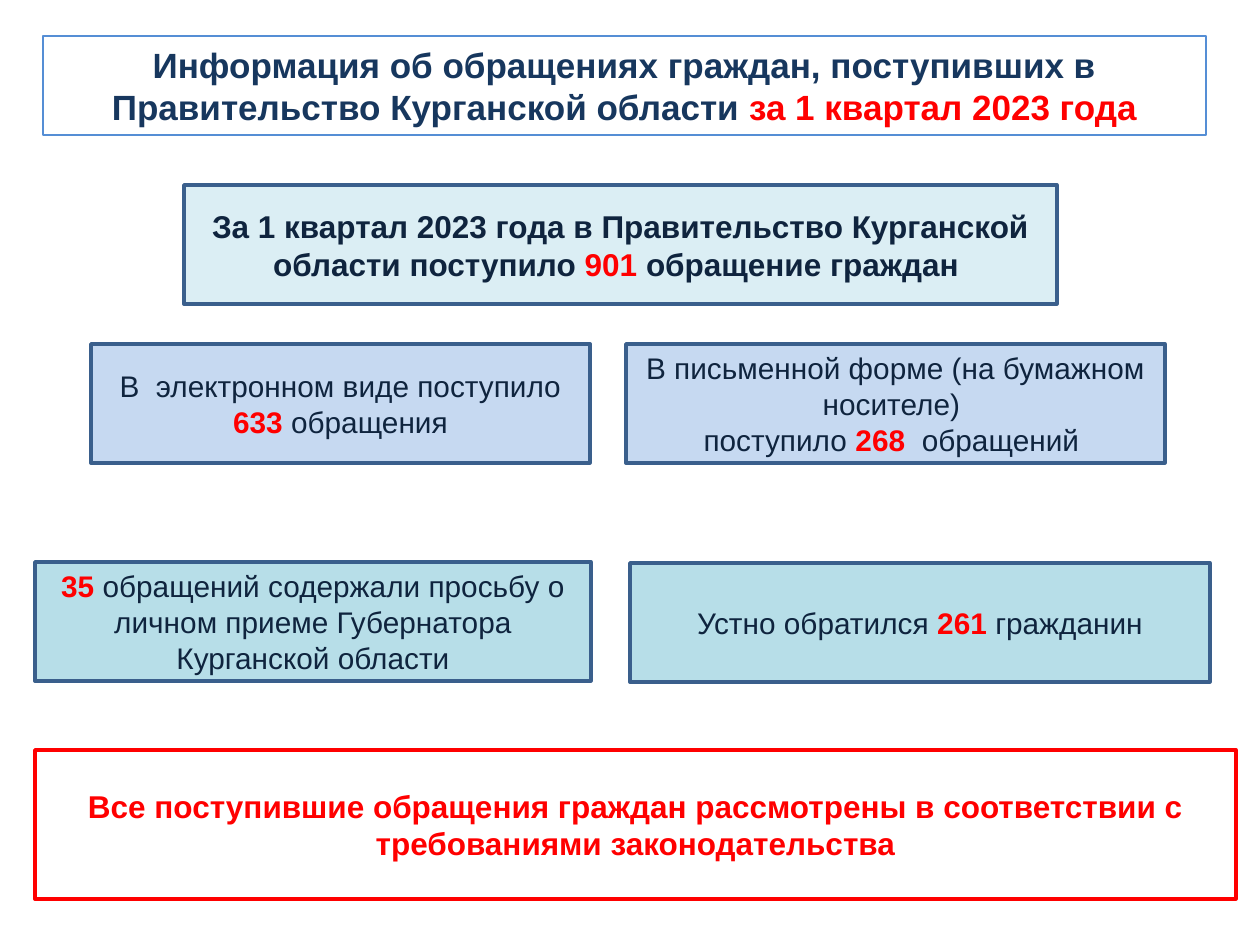
from pptx import Presentation
from pptx.dml.color import RGBColor
from pptx.enum.shapes import MSO_SHAPE
from pptx.enum.text import MSO_ANCHOR, PP_ALIGN
from pptx.util import Emu, Pt

RECT = MSO_SHAPE.RECTANGLE
MIDDLE = MSO_ANCHOR.MIDDLE
CENTER = PP_ALIGN.CENTER
PX = 914400 // 126

RED = RGBColor(0xFF, 0x00, 0x00)
NAVY = RGBColor(0x17, 0x37, 0x5E)
DARK = RGBColor(0x0F, 0x24, 0x3E)
BLUE = RGBColor(0x55, 0x8E, 0xD5)
STEEL = RGBColor(0x3A, 0x5F, 0x8C)
PALE = RGBColor(0xDB, 0xEE, 0xF4)
LILAC = RGBColor(0xC6, 0xD9, 0xF1)
AQUA = RGBColor(0xB7, 0xDE, 0xE8)

prs = Presentation()
prs.slide_width = Emu(1260 * PX)
prs.slide_height = Emu(945 * PX)
s = prs.slides.add_slide(prs.slide_layouts[6])


def add_box(x, y, w, h, fill, line, width, size, bold, paragraphs):
    sp = s.shapes.add_shape(RECT, *(Emu(v * PX) for v in (x, y, w, h)))
    sp.shadow.inherit = False
    if fill is None:
        sp.fill.background()
    else:
        sp.fill.solid()
        sp.fill.fore_color.rgb = fill
    sp.line.color.rgb = line
    sp.line.width = Pt(width)
    tf = sp.text_frame
    tf.word_wrap = True
    tf.vertical_anchor = MIDDLE
    for i, runs in enumerate(paragraphs):
        p = tf.add_paragraph() if i else tf.paragraphs[0]
        p.alignment = CENTER
        p.font.name = "Arial"
        p.font.size = Pt(size)
        for text, color in runs:
            r = p.add_run()
            r.text = text
            r.font.color.rgb = color
            r.font.bold = bold or color == RED


add_box(43, 36, 1163, 99, None, BLUE, 0.75, 20, True, [
    [("Информация об обращениях граждан, поступивших в Правительство Курганской области ", NAVY),
     ("за 1 квартал 2023 года", RED)]])

add_box(184, 185, 873, 119, PALE, STEEL, 2, 18, True, [
    [("За 1 квартал 2023 года в Правительство Курганской области поступило ", DARK),
     ("901 ", RED), ("обращение граждан ", DARK)]])

cards = [
    (91, 344, 499, LILAC, [
        [("В  электронном виде поступило ", DARK), ("633", RED), (" обращения", DARK)]]),
    (626, 344, 539, LILAC, [
        [("В письменной форме (на бумажном носителе) ", DARK)],
        [("поступило ", DARK), ("268  ", RED), ("обращений ", DARK)]]),
    (35, 562, 556, AQUA, [
        [("35 ", RED),
         ("обращений содержали просьбу о личном приеме Губернатора Курганской области", DARK)]]),
    (630, 563, 580, AQUA, [
        [("Устно обратился ", DARK), ("261 ", RED), ("гражданин", DARK)]]),
]
for x, y, w, fill, paragraphs in cards:
    add_box(x, y, w, 119, fill, STEEL, 2, 17, False, paragraphs)

add_box(35, 750, 1201, 149, None, RED, 2, 18, True, [
    [("Все поступившие обращения граждан рассмотрены в соответствии с требованиями законодательства", RED)]])

prs.save("out.pptx")
